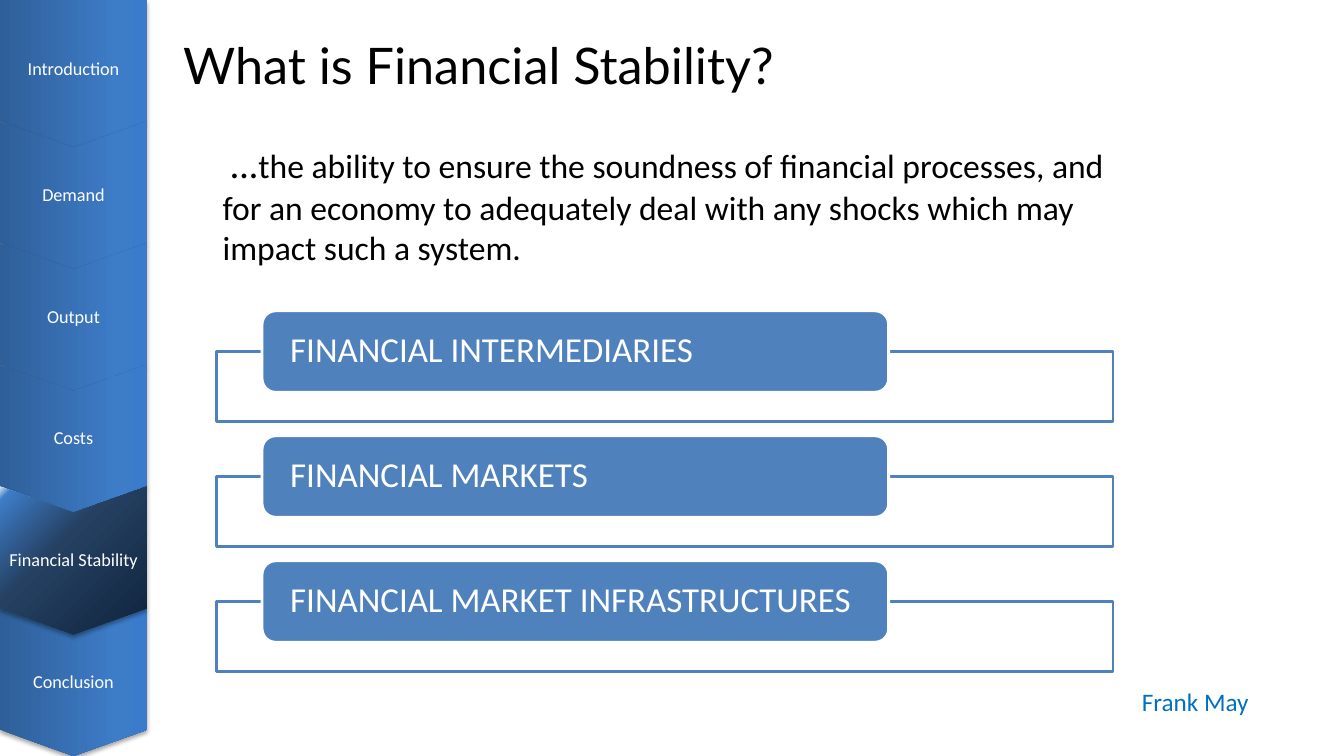
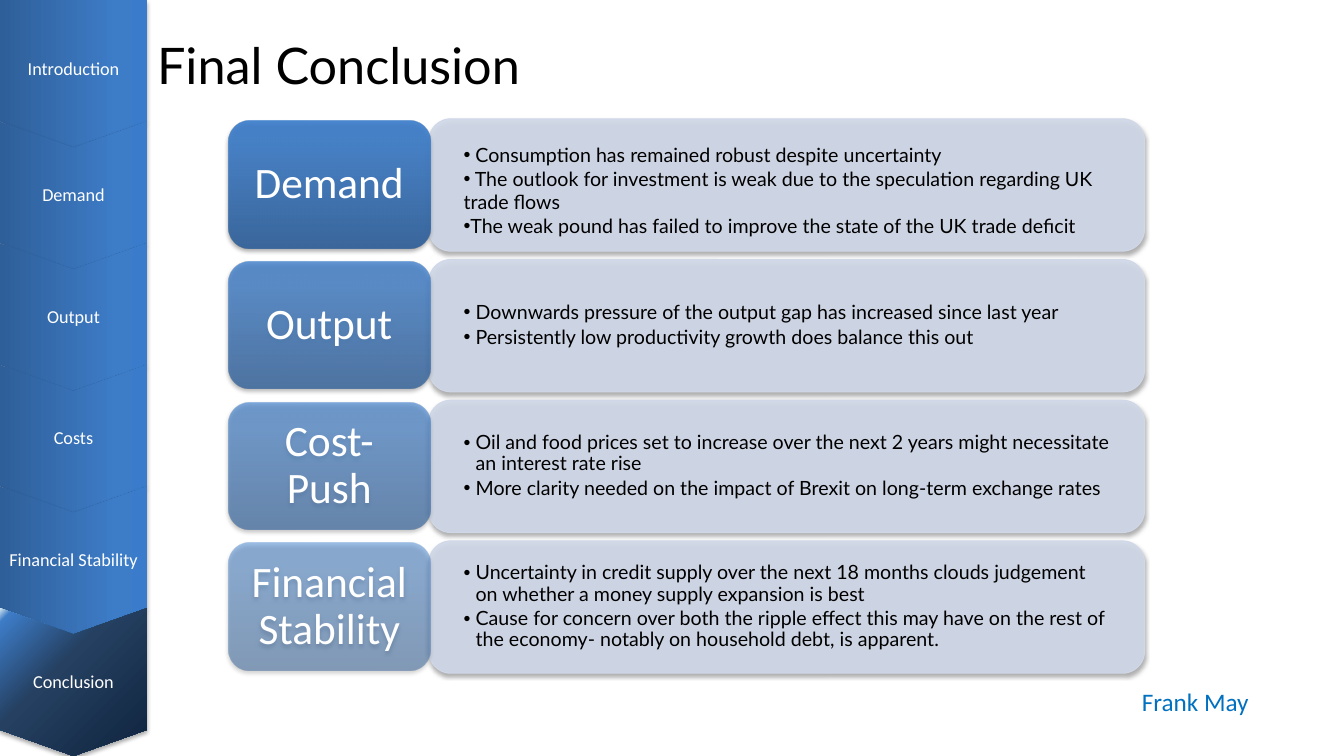
from lxml.etree import SubElement
from pptx import Presentation
from pptx.dml.color import RGBColor
from pptx.enum.shapes import MSO_SHAPE as Preset
from pptx.enum.text import MSO_ANCHOR as Anchor, MSO_AUTO_SIZE as AutoSize, PP_ALIGN as Align
from pptx.oxml import parse_xml
from pptx.oxml.ns import nsdecls, qn
from pptx.util import Inches, Pt

COLORS = {
    "ink": "000000", "paper": "FFFFFF", "box": "4F81BD", "author": "0070C0", "panel": "D0D8E8",
    "deep": "2F5F99", "mid": "3D7CC7", "bright": "3A7CCB",
    "night": "0F243E", "navy": "254061", "ice": "DBEEF4",
}
BLUE_STOPS = [(0, "deep"), (80, "mid"), (100, "bright")]
ACTIVE_STOPS = [(0, "night"), (60, "navy"), (95, "mid"), (100, "ice")]
RIGHTWARD = '<a:lin ang="0" scaled="0"/>'
UPWARD = '<a:lin ang="16200000" scaled="0"/>'
FROM_CORNER = '<a:path path="circle"><a:fillToRect l="100000" t="100000"/></a:path>'

COLUMNS, ROWS = 160, 90
CELL = Inches(7.5) // ROWS
SECTIONS = ["Introduction", "Demand", "Output", "Costs", "Financial Stability", "Conclusion"]
AUTHOR = "Frank May"
NAV_WIDTH, NAV_TIP = 17.5, 3.12
NAV_STEP = (ROWS - NAV_TIP) / len(SECTIONS)

PILLARS = ["FINANCIAL INTERMEDIARIES", "FINANCIAL MARKETS", "FINANCIAL MARKET INFRASTRUCTURES"]
FINDINGS = [
    ("Demand", [
        " Consumption has remained robust despite uncertainty",
        " The outlook for investment is weak due to the speculation regarding UK trade flows",
        "The weak pound has failed to improve the state of the UK trade deficit",
    ]),
    ("Output", [
        "Downwards pressure of the output gap has increased since last year",
        "Persistently low productivity growth does balance this out",
    ]),
    ("Cost-Push", [
        "Oil and food prices set to increase over the next 2 years might necessitate an interest rate rise",
        "More clarity needed on the impact of Brexit on long-term exchange rates",
    ]),
    ("Financial Stability", [
        "Uncertainty in credit supply over the next 18 months clouds judgement on whether a money supply "
        "expansion is best",
        "Cause for concern over both the ripple effect this may have on the rest of the economy- notably on "
        "household debt, is apparent.",
    ]),
]


def cells(*counts):
    return [round(count * CELL) for count in counts]


def rgb(name):
    return RGBColor.from_string(COLORS[name])


class Deck:
    def __init__(self):
        self.prs = Presentation()
        self.prs.slide_width, self.prs.slide_height = cells(COLUMNS, ROWS)
        self.slide = None

    def start(self, layout, title, title_left, section):
        self.slide = self.prs.slides.add_slide(self.prs.slide_layouts[layout])
        heading = self.slide.shapes.title
        self.place(heading, title_left, 3.4, 108, 8.5)
        self.set_text(heading, [title], 36, "ink", "Lato")
        self.navigation(section)
        author = self.slide.shapes.add_textbox(*cells(134.75, 81.1, 24, 4.8))
        self.set_text(author, [AUTHOR], 18, "author")

    def place(self, holder, *box):
        holder.left, holder.top, holder.width, holder.height = cells(*box)

    def set_text(self, shape, lines, size, color, font="Calibri", align=Align.LEFT, anchor=Anchor.MIDDLE,
                 insets=(0.1, 0.05, 0.1, 0.05), spacing=1.0, after=0, hang=None):
        frame = shape.text_frame
        frame.word_wrap = True
        frame.auto_size = AutoSize.NONE
        frame.vertical_anchor = anchor
        frame.margin_left, frame.margin_top, frame.margin_right, frame.margin_bottom = map(Inches, insets)
        for index, line in enumerate(lines):
            paragraph = frame.add_paragraph() if index else frame.paragraphs[0]
            if hang is not None:
                self.bullet(paragraph, hang)
            paragraph.alignment = align
            paragraph.line_spacing = spacing
            paragraph.space_before, paragraph.space_after = Pt(0), Pt(after)
            paragraph.font.size, paragraph.font.name = Pt(size), font
            paragraph.font.color.rgb = rgb(color)
            paragraph.add_run().text = line
        return frame

    def bullet(self, paragraph, hang, mark="•"):
        props = paragraph._p.get_or_add_pPr()
        props.set("marL", str(Inches(hang)))
        props.set("indent", str(-Inches(hang)))
        if mark:
            SubElement(props, qn("a:buFont")).set("typeface", "Arial")
            SubElement(props, qn("a:buChar")).set("char", mark)
        else:
            SubElement(props, qn("a:buNone"))

    def definition(self, lead, statement):
        body = self.slide.placeholders[1]
        self.place(body, 25.3, 16, 112, 20)
        self.bullet(body.text_frame.paragraphs[0], 0, mark=None)
        frame = self.set_text(body, [lead], 24, "ink", anchor=Anchor.TOP)
        opening = frame.paragraphs[0].runs[0]
        opening.font.size, opening.font.italic = Pt(28), True
        frame.paragraphs[0].add_run().text = statement

    def box(self, preset, place, fill, line, width, alpha=100):
        shape = self.slide.shapes.add_shape(preset, *cells(*place))
        shape.shadow.inherit = False
        shape.fill.solid()
        shape.fill.fore_color.rgb = rgb(fill)
        shape.line.color.rgb = rgb(line)
        shape.line.width = Pt(width)
        if alpha < 100:
            tint = shape._element.spPr.find(qn("a:solidFill")).find(qn("a:srgbClr"))
            SubElement(tint, qn("a:alpha")).set("val", str(alpha * 1000))
        return shape

    def gradient(self, shape, stops, direction, alpha=100):
        marks = "".join(
            f'<a:gs pos="{at * 1000}"><a:srgbClr val="{COLORS[name]}"><a:alpha val="{round(alpha * 1000)}"/>'
            f'</a:srgbClr></a:gs>' for at, name in stops)
        shape.line.fill.background()
        shape.fill.background()
        props = shape._element.spPr
        props.replace(props.find(qn("a:noFill")), parse_xml(
            f'<a:gradFill {nsdecls("a")} rotWithShape="1"><a:gsLst>{marks}</a:gsLst>{direction}</a:gradFill>'))
        self.drop_shadow(shape)

    def drop_shadow(self, shape):
        shape.shadow.inherit = False
        shape._element.spPr.find(qn("a:effectLst")).append(parse_xml(
            f'<a:outerShdw {nsdecls("a")} blurRad="40000" dist="23000" dir="5400000" rotWithShape="0">'
            '<a:srgbClr val="000000"><a:alpha val="35000"/></a:srgbClr></a:outerShdw>'))

    def navigation(self, active):
        for section in sorted(SECTIONS, key=lambda name: name == active):
            index = SECTIONS.index(section)
            top, bottom, middle = index * NAV_STEP, (index + 1) * NAV_STEP, NAV_WIDTH / 2
            outline = [(NAV_WIDTH, top), (NAV_WIDTH, bottom), (middle, bottom + NAV_TIP), (0, bottom), (0, top)]
            if index:
                outline.append((middle, top + NAV_TIP))
            points = [tuple(cells(*point)) for point in outline]
            builder = self.slide.shapes.build_freeform(*points[0])
            builder.add_line_segments(points[1:], close=True)
            chevron = builder.convert_to_shape()
            if section == active:
                self.gradient(chevron, ACTIVE_STOPS, FROM_CORNER)
            else:
                self.gradient(chevron, BLUE_STOPS, RIGHTWARD)
            self.set_text(chevron, [section], 13, "paper", align=Align.CENTER, spacing=0.9,
                          insets=(0.04, 0.08, 0.04, 0.08 if index else 0.17))

    def pillar(self, index, name):
        top = 37 + index * 14.88
        self.box(Preset.RECTANGLE, (25.8, top + 4.88, 106.7, 8.28), "paper", "box", 2, alpha=90)
        label = self.box(Preset.ROUNDED_RECTANGLE, (31.2, top, 74.6, 9.7), "box", "paper", 2)
        self.set_text(label, [name], 25, "paper", spacing=0.9, insets=(0.24, 0, 0.24, 0))

    def finding(self, index, name, points):
        top = 14.15 + index * 16.75
        panel = self.box(Preset.FLOWCHART_ALTERNATE_PROCESS, (51.06, top, 85.2, 15.75), "panel", "panel", 0.75,
                         alpha=90)
        self.drop_shadow(panel)
        if index:
            self.set_text(panel, points, 14, "ink", "Lato", insets=(0.28, 0.08, 0.26, 0.08), spacing=0.9,
                          after=2.5, hang=0.12)
        else:
            self.set_text(panel, points, 14, "ink", "Lato", insets=(0.28, 0.1, 0.26, 0), hang=0)
        tab = self.slide.shapes.add_shape(Preset.ROUNDED_RECTANGLE, *cells(27.2, top + 0.25, 24, 15.15))
        self.gradient(tab, BLUE_STOPS, UPWARD, alpha=90 - 40 * index / (len(FINDINGS) - 1))
        self.set_text(tab, [name], 31, "paper", align=Align.CENTER, spacing=0.9, insets=(0.13, 0.06, 0.13, 0.06))


def main():
    deck = Deck()
    deck.start(1, "What is Financial Stability?", 20.6, "Financial Stability")
    deck.definition(" …", "the ability to ensure the soundness of financial processes, and for an economy to "
                    "adequately deal with any shocks which may impact such a system.")
    for index, name in enumerate(PILLARS):
        deck.pillar(index, name)

    deck.start(5, "Final Conclusion", 17.5, "Conclusion")
    for index, (name, points) in enumerate(FINDINGS):
        deck.finding(index, name, points)
    deck.prs.save("out.pptx")


if __name__ == "__main__":
    main()
